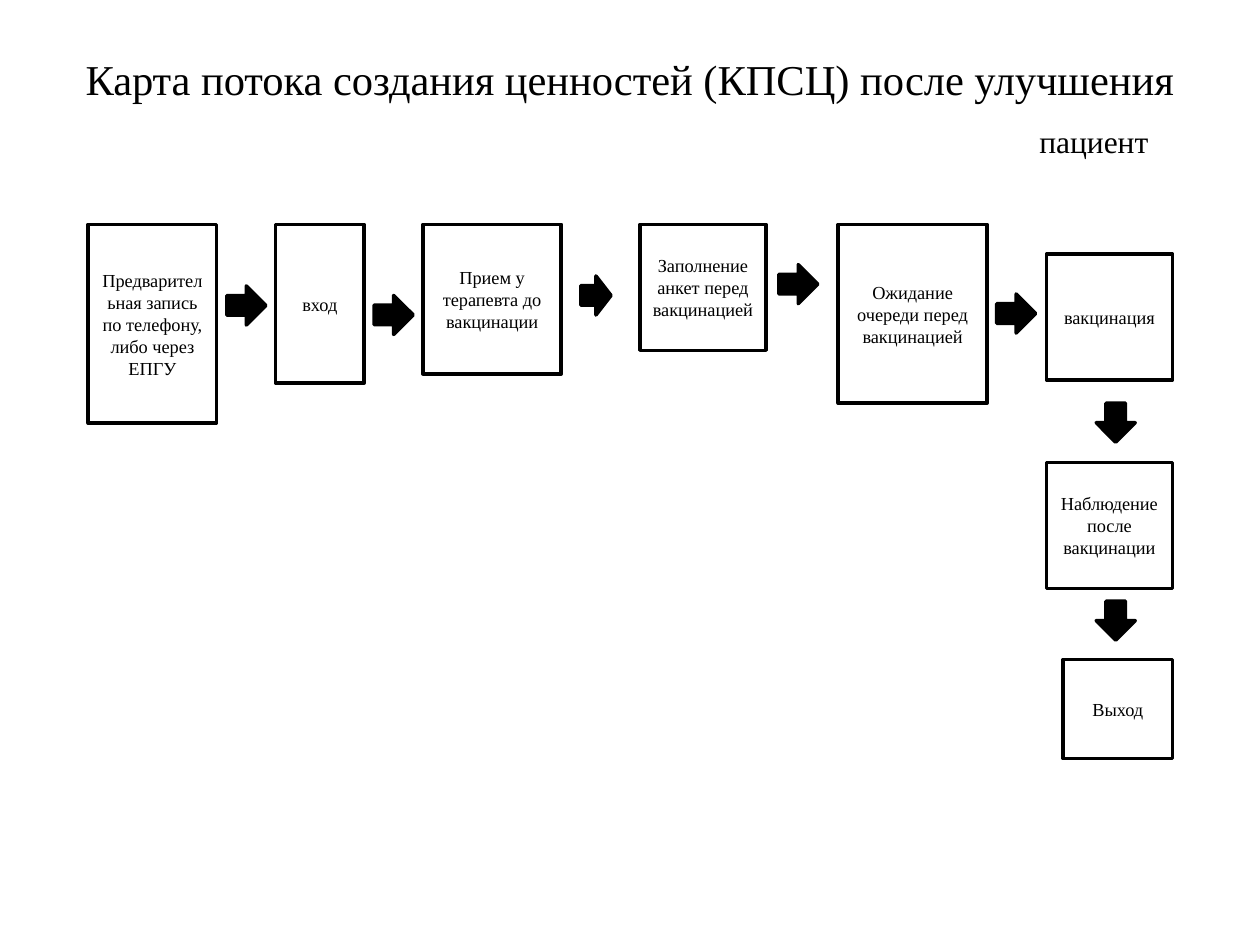
from pptx import Presentation
from pptx.dml.color import RGBColor
from pptx.enum.shapes import MSO_SHAPE
from pptx.enum.text import MSO_ANCHOR, MSO_AUTO_SIZE, PP_ALIGN
from pptx.util import Pt

RECTANGLE = MSO_SHAPE.RECTANGLE
RIGHT = MSO_SHAPE.RIGHT_ARROW
DOWN = MSO_SHAPE.DOWN_ARROW
CENTER = PP_ALIGN.CENTER
MIDDLE = MSO_ANCHOR.MIDDLE
BLACK = "000000"
WHITE = "FFFFFF"
ROW_TOP = 128.2
ARROW_SIZE = 22.3


def color(value):
    return RGBColor.from_string(value)


def write(shape, text, size, alignment):
    shape.text_frame.text = text
    paragraph = shape.text_frame.paragraphs[0]
    paragraph.alignment = alignment
    paragraph.font.name = "Times New Roman"
    paragraph.font.size = Pt(size)
    paragraph.font.color.rgb = color(BLACK)


presentation = Presentation()
presentation.slide_width = Pt(720)
presentation.slide_height = Pt(540)
slide = presentation.slides.add_slide(presentation.slide_layouts[5])

title = slide.shapes.title
title.left, title.top, title.width, title.height = Pt(36), Pt(21), Pt(648), Pt(67.5)
write(title, "Карта потока создания ценностей (КПСЦ) после улучшения", 24.3, CENTER)
title.text_frame.vertical_anchor = MIDDLE
title.text_frame.margin_bottom = Pt(23)
title.text_frame.auto_size = MSO_AUTO_SIZE.NONE

patient = slide.shapes.add_textbox(Pt(586.8), Pt(66.4), Pt(77.8), Pt(29))
write(patient, "пациент", 18, PP_ALIGN.LEFT)
patient.text_frame.word_wrap = False

steps = [
    ("Предварительная запись по телефону, либо через ЕПГУ", 50.4, ROW_TOP, 73.4, 113.6),
    ("вход", 157.5, ROW_TOP, 50.6, 90.7),
    ("Прием у терапевта до вакцинации", 241.7, ROW_TOP, 79, 85.5),
    ("Заполнение анкет перед вакцинацией", 365.7, ROW_TOP, 72, 72),
    ("Ожидание очереди перед вакцинацией", 479, ROW_TOP, 85, 102.2),
    ("вакцинация", 598, 145.2, 72, 72),
    ("Наблюдение после вакцинации", 598, 264.3, 72, 72),
    ("Выход", 607.5, 376.8, 62.5, 56.7),
]
arrows = [
    (RIGHT, 129.6, 163.4, ARROW_SIZE),
    (RIGHT, 213.8, 168.8, ARROW_SIZE),
    (RIGHT, 331.9, 157.7, 17.3),
    (RIGHT, 445, 151.2, ARROW_SIZE),
    (RIGHT, 569.5, 168, ARROW_SIZE),
    (DOWN, 626.4, 230.4, ARROW_SIZE),
    (DOWN, 626.4, 343.5, ARROW_SIZE),
]
parts = [(RECTANGLE, text, WHITE, place) for text, *place in steps]
parts += [
    (kind, "", BLACK, (left, top, width, ARROW_SIZE))
    for kind, left, top, width in arrows
]

for kind, text, fill, place in parts:
    shape = slide.shapes.add_shape(kind, *[Pt(length) for length in place])
    shape.shadow.inherit = False
    shape.fill.solid()
    shape.fill.fore_color.rgb = color(fill)
    shape.line.color.rgb = color(BLACK)
    shape.line.width = Pt(2)
    if text:
        write(shape, text, 10.5, CENTER)
        shape.text_frame.word_wrap = True
        shape.text_frame.vertical_anchor = MIDDLE

presentation.save("out.pptx")
